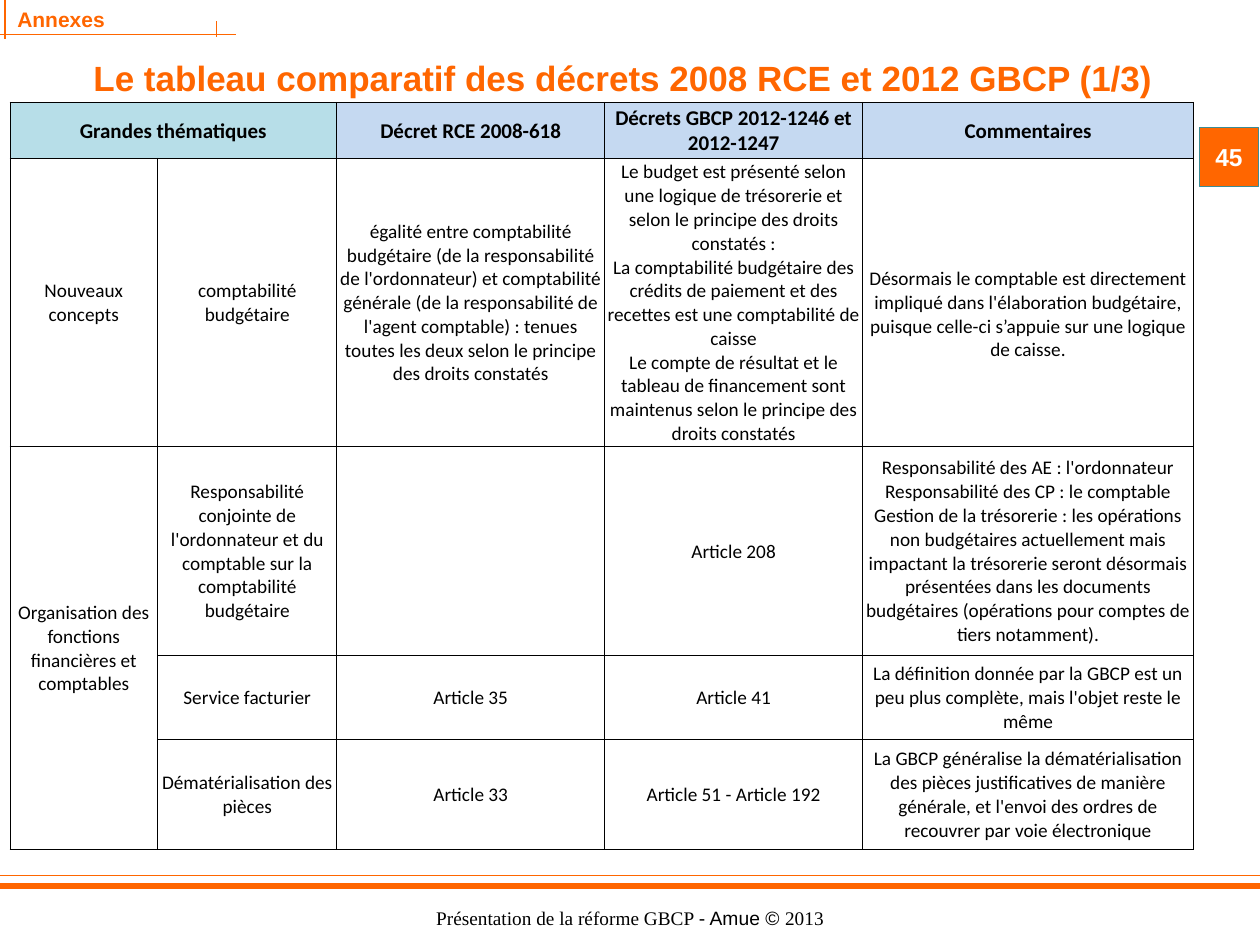
from dataclasses import dataclass

from lxml import etree
from pptx import Presentation
from pptx.dml.color import RGBColor
from pptx.enum.shapes import MSO_CONNECTOR, MSO_SHAPE
from pptx.enum.text import MSO_ANCHOR, PP_ALIGN
from pptx.oxml.ns import qn
from pptx.util import Cm, Pt

STRAIGHT = MSO_CONNECTOR.STRAIGHT
RECTANGLE = MSO_SHAPE.RECTANGLE
TOP, MIDDLE = MSO_ANCHOR.TOP, MSO_ANCHOR.MIDDLE
LEFT, CENTER = PP_ALIGN.LEFT, PP_ALIGN.CENTER


@dataclass(frozen=True)
class Theme:
    accent: str = "FF6600"
    ink: str = "000000"
    paper: str = "FFFFFF"
    badge_edge: str = "3C8C93"
    topic_head: str = "B7DEE8"
    column_head: str = "C5D9F1"
    heading_font: str = "Arial"
    table_font: str = "Calibri"
    footer_font: str = "Times New Roman"
    title_size: int = 20
    badge_size: int = 14
    head_size: int = 12
    body_size: int = 11


class SlideBuilder:
    def __init__(self, slide, theme):
        self.slide = slide
        self.theme = theme

    def style(self, font, family, size, color, bold=False):
        font.name = family
        font.size = Pt(size)
        font.bold = bold
        font.color.rgb = RGBColor.from_string(color)

    def line(self, x1, y1, x2, y2, width=0.75):
        rule = self.slide.shapes.add_connector(STRAIGHT, Cm(x1), Cm(y1), Cm(x2), Cm(y2))
        rule.line.color.rgb = RGBColor.from_string(self.theme.accent)
        rule.line.width = Pt(width)
        etree.SubElement(rule._element.spPr, qn("a:effectLst"))

    def heading(self, box, text, size, align=LEFT, anchor=TOP):
        frame = self.slide.shapes.add_textbox(*map(Cm, box)).text_frame
        frame.word_wrap = True
        frame.vertical_anchor = anchor
        paragraph = frame.paragraphs[0]
        paragraph.text = text
        paragraph.alignment = align
        self.style(paragraph.font, self.theme.heading_font, size, self.theme.accent, True)

    def rectangle(self, box, fill, edge=None):
        panel = self.slide.shapes.add_shape(RECTANGLE, *map(Cm, box))
        panel.shadow.inherit = False
        panel.fill.solid()
        panel.fill.fore_color.rgb = RGBColor.from_string(fill)
        if edge:
            panel.line.color.rgb = RGBColor.from_string(edge)
            panel.line.width = Pt(0.75)
        else:
            panel.line.fill.background()
        frame = panel.text_frame
        frame.word_wrap = True
        frame.vertical_anchor = MIDDLE
        frame.paragraphs[0].alignment = CENTER
        return frame

    def page_badge(self, box, number):
        frame = self.rectangle(box, self.theme.accent, self.theme.badge_edge)
        frame.margin_left = frame.margin_right = Cm(0.1)
        paragraph = frame.paragraphs[0]
        paragraph.text = number
        self.style(paragraph.font, self.theme.heading_font, self.theme.badge_size,
                   self.theme.paper, True)

    def footer(self, box, parts):
        paragraph = self.rectangle(box, self.theme.paper).paragraphs[0]
        for text, family in parts:
            run = paragraph.add_run()
            run.text = text
            self.style(run.font, family, self.theme.body_size, self.theme.ink)

    def borders(self, cell):
        properties = cell._tc.get_or_add_tcPr()
        for position, side in enumerate(("a:lnL", "a:lnR", "a:lnT", "a:lnB")):
            edge = etree.Element(qn(side), w=str(Pt(0.5)))
            fill = etree.SubElement(edge, qn("a:solidFill"))
            etree.SubElement(fill, qn("a:srgbClr"), val=self.theme.ink)
            properties.insert(position, edge)

    def cell(self, cell, text, fill, header):
        cell.margin_left = cell.margin_right = cell.margin_top = Cm(0.03)
        cell.margin_bottom = Cm(0)
        cell.vertical_anchor = MIDDLE
        cell.fill.solid()
        cell.fill.fore_color.rgb = RGBColor.from_string(fill)
        self.borders(cell)
        paragraph = cell.text_frame.paragraphs[0]
        paragraph.text = text
        paragraph.alignment = CENTER
        size = self.theme.head_size if header else self.theme.body_size
        self.style(paragraph.font, self.theme.table_font, size, self.theme.ink, header)

    def table(self, left, top, widths, heights, rows, spans):
        grid = self.slide.shapes.add_table(
            len(heights), len(widths), Cm(left), Cm(top),
            Cm(sum(widths)), Cm(sum(heights))).table
        for column, width in zip(grid.columns, widths):
            column.width = Cm(width)
        for row, height in zip(grid.rows, heights):
            row.height = Cm(height)
        for r, texts in enumerate(rows):
            for c, text in enumerate(texts):
                fill = self.theme.paper
                if r == 0:
                    fill = self.theme.topic_head if c < 2 else self.theme.column_head
                self.cell(grid.cell(r, c), text, fill, r == 0)
        for first, last in spans:
            grid.cell(*first).merge(grid.cell(*last))
        return grid


COMPARISON = [
    ["Grandes thématiques", "", "Décret RCE 2008-618",
     "Décrets GBCP 2012-1246 et 2012-1247", "Commentaires"],
    ["Nouveaux concepts", "comptabilité budgétaire",
     "égalité entre comptabilité budgétaire (de la responsabilité de l'ordonnateur) et "
     "comptabilité générale (de la responsabilité de l'agent comptable) : tenues toutes "
     "les deux selon le principe des droits constatés",
     "Le budget est présenté selon une logique de trésorerie et selon le principe des "
     "droits constatés :\n"
     "La comptabilité budgétaire des crédits de paiement et des recettes est une "
     "comptabilité de caisse\n"
     "Le compte de résultat et le tableau de financement sont maintenus selon le "
     "principe des droits constatés",
     "Désormais le comptable est directement impliqué dans l'élaboration budgétaire, "
     "puisque celle-ci s’appuie sur une logique de caisse."],
    ["Organisation des fonctions financières et comptables",
     "Responsabilité conjointe de l'ordonnateur et du comptable sur la comptabilité "
     "budgétaire",
     "", "Article 208",
     "Responsabilité des AE : l'ordonnateur\n"
     "Responsabilité des CP : le comptable\n"
     "Gestion de la trésorerie : les opérations non budgétaires actuellement mais "
     "impactant la trésorerie seront désormais présentées dans les documents "
     "budgétaires (opérations pour comptes de tiers notamment)."],
    ["", "Service facturier", "Article 35", "Article 41",
     "La définition donnée par la GBCP est un peu plus complète, mais l'objet reste le "
     "même"],
    ["", "Dématérialisation des pièces", "Article 33", "Article 51 - Article 192",
     "La GBCP généralise la dématérialisation des pièces justificatives de manière "
     "générale, et l'envoi des ordres de recouvrer par voie électronique"],
]


def main():
    deck = Presentation()
    deck.slide_width, deck.slide_height = Cm(25.4), Cm(19.05)
    theme = Theme()
    page = SlideBuilder(deck.slides.add_slide(deck.slide_layouts[6]), theme)

    page.line(0, 17.65, 25.4, 17.65)
    page.line(0, 17.86, 25.4, 17.86, 3)
    page.footer((4.37, 18.14, 16.66, 0.74), [
        ("Présentation de la réforme GBCP ", theme.footer_font),
        ("- Amue © ", theme.heading_font),
        ("2013", theme.footer_font),
    ])

    page.heading((0.1, 0, 5.79, 0.76), "Annexes", theme.head_size)
    page.line(0.1, 0, 0.1, 0.79)
    page.line(0, 0.69, 4.75, 0.69)
    page.line(4.37, 0.74, 4.37, 0.43)

    page.heading((1.12, 0.66, 22.89, 1.8),
                 "Le tableau comparatif des décrets 2008 RCE et 2012 GBCP (1/3)",
                 theme.title_size, CENTER, MIDDLE)
    page.page_badge((24.18, 2.57, 1.19, 1.19), "45")

    comparison = page.table(
        0.2, 2.06, (2.98, 3.61, 5.4, 5.2, 6.67), (1.13, 5.81, 4.21, 1.69, 2.22),
        COMPARISON, [((0, 0), (0, 1)), ((2, 0), (4, 0))])
    comparison.cell(1, 4).margin_top = Cm(0.5)

    deck.save("out.pptx")


if __name__ == "__main__":
    main()
